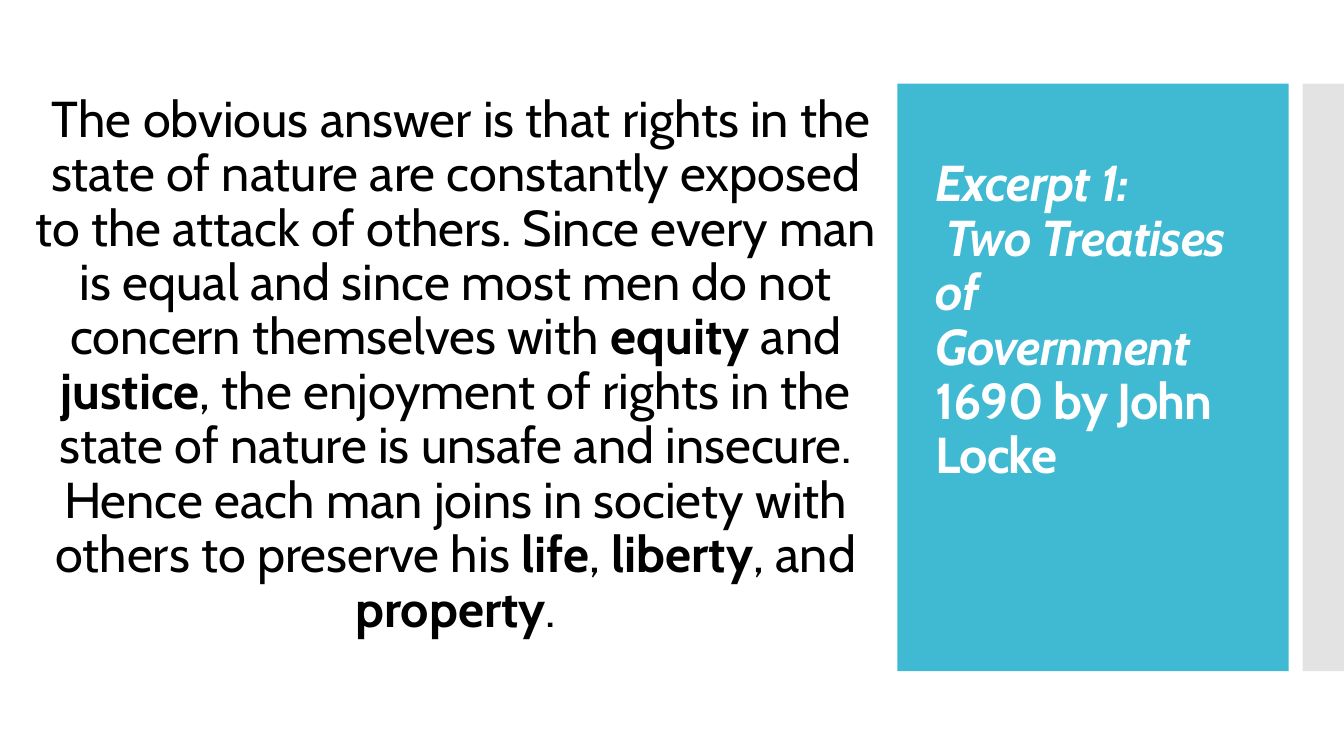
from lxml.etree import SubElement
from pptx import Presentation
from pptx.dml.color import RGBColor
from pptx.enum.shapes import MSO_SHAPE as Shape
from pptx.enum.text import MSO_ANCHOR as Anchor, PP_ALIGN as Align
from pptx.oxml.ns import qn
from pptx.util import Pt

PX = 9144
FONT = "Cabin"
COLORS = {"panel": "40BAD2", "edge": "C8C8C8", "title": "FFFFFF", "body": "000000"}
BAND_TOP, BAND_HEIGHT = 83, 583

TITLE = [
    ("Excerpt 1:\v Two Treatises of Government", True, True),
    (" 1690 by John Locke", True, False),
]
EXCERPT = [
    (" The obvious answer is that rights in the state of nature are constantly "
     "exposed to the attack of others. Since every man is equal and since most men "
     "do not concern themselves with ", False, False),
    ("equity ", True, False),
    ("and ", False, False),
    ("justice", True, False),
    (", the enjoyment of rights in the state of nature is unsafe and insecure. "
     "Hence each man joins in society with others to preserve his ", False, False),
    ("life", True, False),
    (", ", False, False),
    ("liberty", True, False),
    (", and ", False, False),
    ("property", True, False),
    (".", False, False),
]


def add_band(slide, left, width, color, opacity=100):
    """Add a borderless full-height rectangle of the slide's band."""
    shape = slide.shapes.add_shape(
        Shape.RECTANGLE, left * PX, BAND_TOP * PX, width * PX, BAND_HEIGHT * PX)
    shape.shadow.inherit = False
    shape.line.fill.background()
    shape.fill.solid()
    shape.fill.fore_color.rgb = RGBColor.from_string(COLORS[color])
    if opacity < 100:
        color_element = shape.fill._xPr.find(".//" + qn("a:srgbClr"))
        SubElement(color_element, qn("a:alpha")).set("val", str(opacity * 1000))


def format_run(run, color, bold, italic, tracking):
    """Set the font, colour and character spacing of a run."""
    run.font.name = FONT
    run.font.size = Pt(36)
    run.font.bold = bold
    run.font.italic = italic
    run.font.color.rgb = RGBColor.from_string(COLORS[color])
    if tracking:
        run.font._element.set("spc", str(tracking))


def add_text(slide, box, pieces, color, anchor, align, margin_top=5, before=0, tracking=0):
    """Add a wrapped text box holding one paragraph of styled pieces."""
    shape = slide.shapes.add_textbox(*(length * PX for length in box))
    frame = shape.text_frame
    frame.word_wrap = True
    frame.vertical_anchor = anchor
    frame.margin_top = margin_top * PX
    paragraph = frame.paragraphs[0]
    paragraph.alignment = align
    paragraph.line_spacing = 0.9
    paragraph.space_before = Pt(before)
    for text, bold, italic in pieces:
        for index, line in enumerate(text.split("\v")):
            if index:
                paragraph.add_line_break()
            run = paragraph.add_run()
            run.text = line
            format_run(run, color, bold, italic, tracking)


def main():
    """Build the excerpt slide and save it."""
    presentation = Presentation()
    presentation.slide_width = 1333 * PX
    presentation.slide_height = 750 * PX
    slide = presentation.slides.add_slide(presentation.slide_layouts[6])
    add_band(slide, 890, 388, "panel")
    add_band(slide, 1292, 41, "edge", opacity=50)
    add_text(slide, (918, 123, 322, 503), TITLE, "title", Anchor.TOP, Align.LEFT,
             margin_top=34, tracking=-60)
    add_text(slide, (15, 83, 874, 560), EXCERPT, "body", Anchor.MIDDLE, Align.CENTER,
             before=12)
    presentation.save("out.pptx")


if __name__ == "__main__":
    main()
